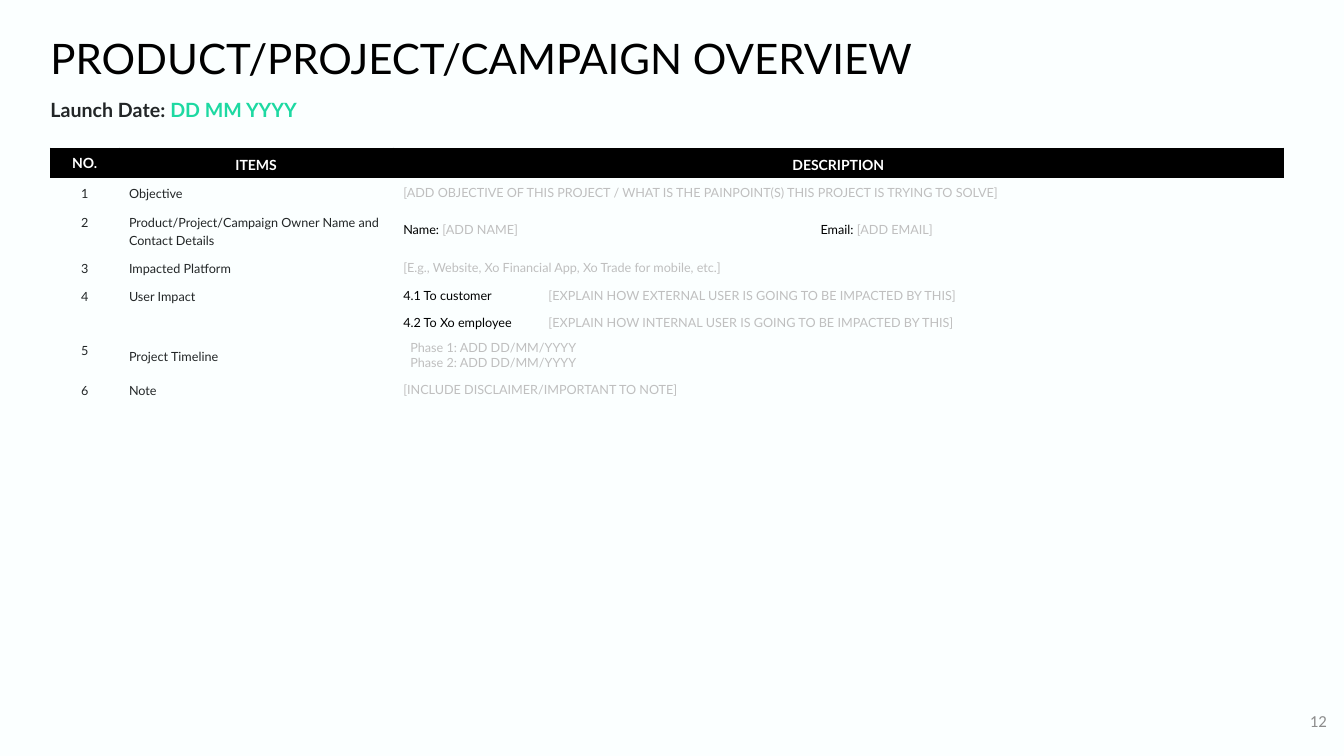
"""Build the product, project or campaign overview slide."""
from lxml.etree import SubElement
from pptx import Presentation
from pptx.dml.color import RGBColor
from pptx.enum.text import MSO_ANCHOR, MSO_AUTO_SIZE, PP_ALIGN
from pptx.oxml import parse_xml
from pptx.oxml.ns import nsdecls, qn
from pptx.util import Inches, Pt

BACKGROUND = RGBColor(0xFB, 0xFF, 0xFF)
BLACK = RGBColor(0x00, 0x00, 0x00)
WHITE = RGBColor(0xFF, 0xFF, 0xFF)
INK = RGBColor(0x22, 0x26, 0x27)
GREEN = RGBColor(0x1D, 0xD9, 0xA2)
HINT = RGBColor(0xBF, 0xBF, 0xBF)
PAGE_GRAY = RGBColor(0x8C, 0x8C, 0x8C)

PLAIN_STYLE = "{2D5ABB26-0587-4C30-8999-92F81FD0307C}"
COLUMN_WIDTHS = (0.68, 2.72, 1.44, 2.7, 4.69)
HEADER_HEIGHT = 0.15
ROW_HEIGHT = 0.21
HEADINGS = ("NO.", "ITEMS", "DESCRIPTION")

# Each row holds its number, its item, and descriptions by first column.
ROWS = (
    ("1", "Objective", {2: [[(
        "[ADD OBJECTIVE OF THIS PROJECT / WHAT IS THE PAINPOINT(S) "
        "THIS PROJECT IS TRYING TO SOLVE]", HINT)]]}),
    ("2", "Product/Project/Campaign Owner Name and Contact Details", {
        2: [[("Name: ", BLACK), ("[ADD NAME]", HINT)]],
        4: [[("Email: ", BLACK), ("[ADD EMAIL]", HINT)]]}),
    ("3", "Impacted Platform", {2: [[(
        "[E.g., Website, Xo Financial App, Xo Trade for mobile, etc.]", HINT)]]}),
    ("4", "User Impact", {
        2: [[("4.1 To customer", BLACK)]],
        3: [[("[EXPLAIN HOW EXTERNAL USER IS GOING TO BE IMPACTED BY THIS]", HINT)]]}),
    ("", "", {
        2: [[("4.2 To Xo employee", BLACK)]],
        3: [[("[EXPLAIN HOW INTERNAL USER IS GOING TO BE IMPACTED BY THIS]", HINT)]]}),
    ("5", "Project Timeline", {2: [
        [("Phase 1: ADD DD/MM/YYYY", HINT)],
        [("Phase 2: ADD DD/MM/YYYY", HINT)]]}),
    ("6", "Note", {2: [[("[INCLUDE DISCLAIMER/IMPORTANT TO NOTE]", HINT)]]}),
)


def add_spans(para, spans, size, bold=False, font="Lato", spacing=1.0,
              align=PP_ALIGN.LEFT):
    """Add coloured runs to a paragraph and format it."""
    para.alignment = align
    para.line_spacing = spacing
    for text, color in spans:
        span = para.add_run()
        span.text = text
        span.font.name = font
        span.font.size = Pt(size)
        span.font.bold = bold
        span.font.color.rgb = color


def set_frame(frame, margins, anchor=MSO_ANCHOR.TOP):
    """Set wrapping, insets and anchor of a text frame."""
    frame.word_wrap = True
    frame.auto_size = MSO_AUTO_SIZE.NONE
    frame.vertical_anchor = anchor
    (frame.margin_left, frame.margin_top,
     frame.margin_right, frame.margin_bottom) = map(Inches, margins)


def add_title(page, text):
    """Place and fill the title placeholder."""
    title = page.shapes.title
    title.left, title.top = Inches(0.5), Inches(0.42)
    title.width, title.height = Inches(12.44), Inches(0.45)
    set_frame(title.text_frame, (0, 0, 0, 0))
    add_spans(title.text_frame.paragraphs[0], [(text, BLACK)], 30, spacing=0.8)


def add_text(page, place, spans, size, margins, anchor=MSO_ANCHOR.TOP, **style):
    """Add a text box with one paragraph."""
    box = page.shapes.add_textbox(*map(Inches, place))
    set_frame(box.text_frame, margins, anchor)
    add_spans(box.text_frame.paragraphs[0], spans, size, **style)


def fill_cell(cell, paragraphs, size=9, anchor=MSO_ANCHOR.MIDDLE, indent=0, **style):
    """Write paragraphs of coloured runs into a table cell."""
    cell.vertical_anchor = anchor
    frame = cell.text_frame
    for index, spans in enumerate(paragraphs):
        para = frame.add_paragraph() if index else frame.paragraphs[0]
        add_spans(para, spans, size, **style)
        if indent:
            para._p.get_or_add_pPr().set("marL", str(Inches(indent)))


def shrink_blank(cell):
    """Give an empty cell the text size of its row."""
    SubElement(cell.text_frame.paragraphs[0]._p, qn("a:endParaRPr"), sz="900")


def paint_heading(cell):
    """Fill a heading cell and border its left, right and top."""
    cell.fill.solid()
    cell.fill.fore_color.rgb = BLACK
    properties = cell._tc.get_or_add_tcPr()
    for index, side in enumerate(("lnL", "lnR", "lnT")):
        properties.insert(index, parse_xml(
            f'<a:{side} {nsdecls("a")} w="{Pt(1)}"><a:solidFill>'
            f'<a:srgbClr val="{BLACK}"/></a:solidFill></a:{side}>'))


def add_overview_table(page):
    """Add the table of items and descriptions."""
    last = len(COLUMN_WIDTHS) - 1
    height = HEADER_HEIGHT + ROW_HEIGHT * len(ROWS)
    table = page.shapes.add_table(
        len(ROWS) + 1, last + 1, Inches(0.5), Inches(1.47),
        Inches(sum(COLUMN_WIDTHS)), Inches(height)).table
    table.horz_banding = table.first_row = False
    table._tbl.tblPr.find(qn("a:tableStyleId")).text = PLAIN_STYLE
    for column, width in zip(table.columns, COLUMN_WIDTHS):
        column.width = Inches(width)
    for index, row in enumerate(table.rows):
        row.height = Inches(ROW_HEIGHT if index else HEADER_HEIGHT)
    for cell in table.iter_cells():
        cell.fill.background()

    table.cell(0, 2).merge(table.cell(0, last))
    for column, heading in enumerate(HEADINGS):
        cell = table.cell(0, column)
        fill_cell(cell, [[(heading, WHITE)]], size=10, bold=True,
                  spacing=1.2 if column else 1.0, align=PP_ALIGN.CENTER)
        paint_heading(cell)

    for index, (number, item, details) in enumerate(ROWS, start=1):
        if number:
            fill_cell(table.cell(index, 0), [[(number, INK)]], spacing=1.2,
                      anchor=MSO_ANCHOR.TOP, align=PP_ALIGN.CENTER)
            fill_cell(table.cell(index, 1), [[(item, INK)]], spacing=1.2)
        starts = list(details)
        ends = [start - 1 for start in starts[1:]] + [last]
        for start, end in zip(starts, ends):
            cell = table.cell(index, start)
            if end > start:
                cell.merge(table.cell(index, end))
            fill_cell(cell, details[start],
                      indent=0.07 if len(details[start]) > 1 else 0)

    for cell in table.iter_cells():
        if not cell.text_frame.text:
            shrink_blank(cell)


def main():
    """Create the deck and save it."""
    deck = Presentation()
    deck.slide_width, deck.slide_height = Inches(13.33), Inches(7.5)
    page = deck.slides.add_slide(deck.slide_layouts[5])
    page.background.fill.solid()
    page.background.fill.fore_color.rgb = BACKGROUND
    add_text(page, (12.86, 6.95, 0.4, 0.41), [("12", PAGE_GRAY)], 12,
             (0.1, 0.05, 0.1, 0.05), MSO_ANCHOR.MIDDLE,
             font="Calibri", align=PP_ALIGN.RIGHT)
    add_title(page, "PRODUCT/PROJECT/CAMPAIGN OVERVIEW")
    add_text(page, (0.5, 0.88, 12.58, 0.36),
             [("Launch Date: ", INK), ("DD MM YYYY", GREEN)], 14,
             (0, 0.05, 0.1, 0.05), bold=True, spacing=1.2)
    add_overview_table(page)
    deck.save("out.pptx")


if __name__ == "__main__":
    main()
